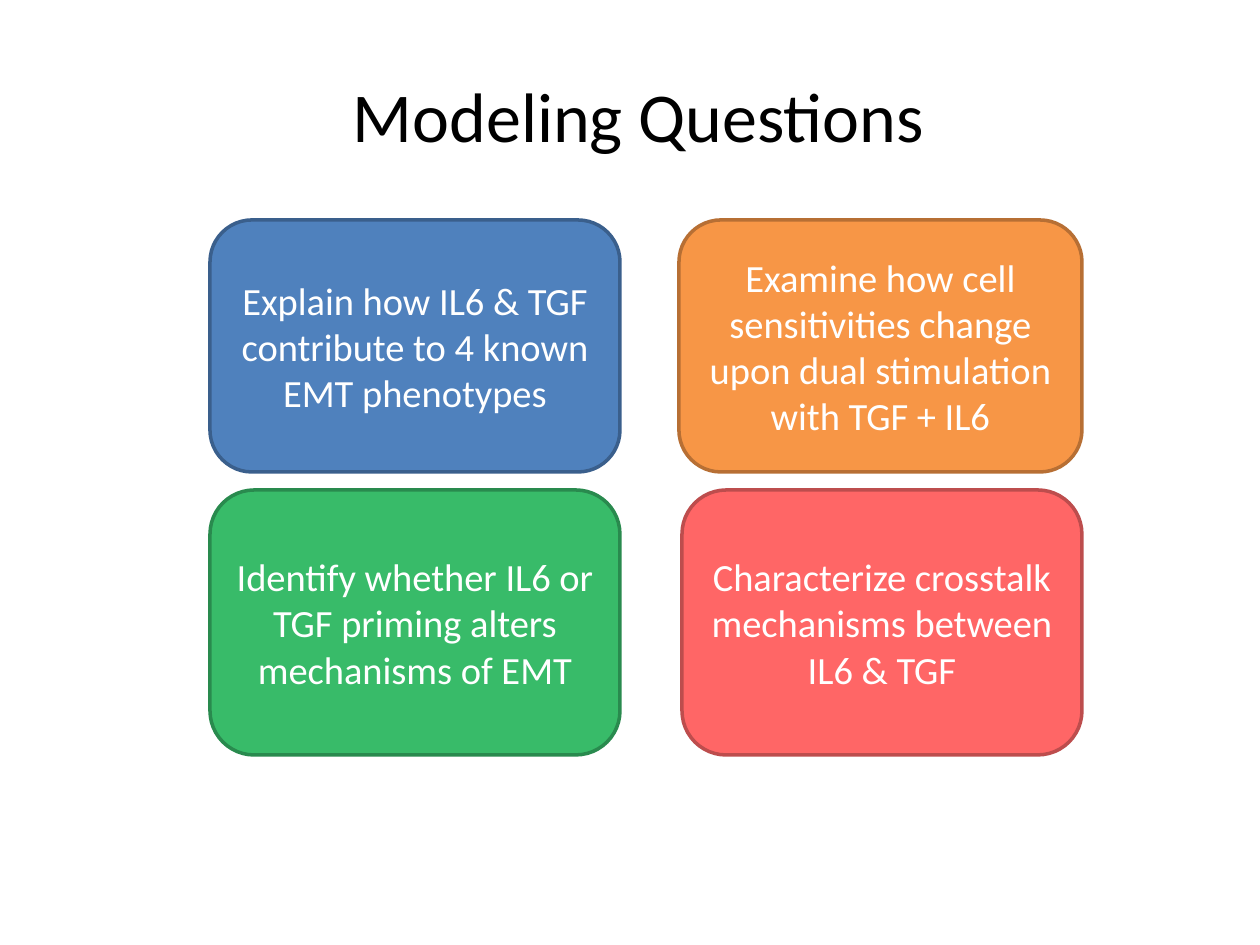
import dataclasses

import pptx
import pptx.dml.color
import pptx.enum.shapes
import pptx.enum.text
import pptx.util

SCALE = 914400 // 126  # EMU per px


@dataclasses.dataclass
class Theme:
    font: str = "Calibri"
    title: int = 40
    body: int = 22
    edge: int = 2
    ink: str = "000000"
    paper: str = "FFFFFF"
    blue: tuple = ("4F81BD", "3A5F8C")
    orange: tuple = ("F79646", "B76F34")
    green: tuple = ("38BB69", "298A4E")
    red: tuple = ("FF6666", "BD4D4D")


def rgb(code):
    return pptx.dml.color.RGBColor.from_string(code)


class Deck:
    def __init__(self, theme, wide, high):
        self.theme = theme
        self.file = pptx.Presentation()
        self.file.slide_width = wide * SCALE
        self.file.slide_height = high * SCALE
        self.slide = self.file.slides.add_slide(self.file.slide_layouts[6])

    def label(self, shape, text, size, color):
        frame = shape.text_frame
        frame.text = text
        frame.word_wrap = True
        frame.vertical_anchor = pptx.enum.text.MSO_ANCHOR.MIDDLE
        for para in frame.paragraphs:
            para.alignment = pptx.enum.text.PP_ALIGN.CENTER
            for run in para.runs:
                run.font.name = self.theme.font
                run.font.size = pptx.util.Pt(size)
                run.font.color.rgb = rgb(color)

    def title(self, box, text):
        shape = self.slide.shapes.add_textbox(*(n * SCALE for n in box))
        self.label(shape, text, self.theme.title, self.theme.ink)

    def card(self, box, text, tone):
        kind = pptx.enum.shapes.MSO_SHAPE.ROUNDED_RECTANGLE
        shape = self.slide.shapes.add_shape(kind, *(n * SCALE for n in box))
        fill, line = tone
        shape.shadow.inherit = False
        shape.fill.solid()
        shape.fill.fore_color.rgb = rgb(fill)
        shape.line.color.rgb = rgb(line)
        shape.line.width = pptx.util.Pt(self.theme.edge)
        self.label(shape, text, self.theme.body, self.theme.paper)


def main():
    theme = Theme()
    deck = Deck(theme, 1260, 945)

    # Heading
    deck.title((158, 35, 961, 158), "Modeling Questions")

    # Question cards: two rows, right column ends on one edge
    left, width, right = 210, 410, 1082
    rows = [
        (220, 252, 679, [
            ("Explain how IL6 & TGF contribute to 4 known EMT phenotypes", theme.blue),
            ("Examine how cell sensitivities change upon dual stimulation with TGF + IL6",
             theme.orange),
        ]),
        (490, 265, 682, [
            ("Identify whether IL6 or TGF priming alters mechanisms of EMT", theme.green),
            ("Characterize crosstalk mechanisms between IL6 & TGF", theme.red),
        ]),
    ]
    for top, high, start, cards in rows:
        spans = [(left, width), (start, right - start)]
        for (x, wide), (text, tone) in zip(spans, cards):
            deck.card((x, top, wide, high), text, tone)

    deck.file.save("out.pptx")


if __name__ == "__main__":
    main()
